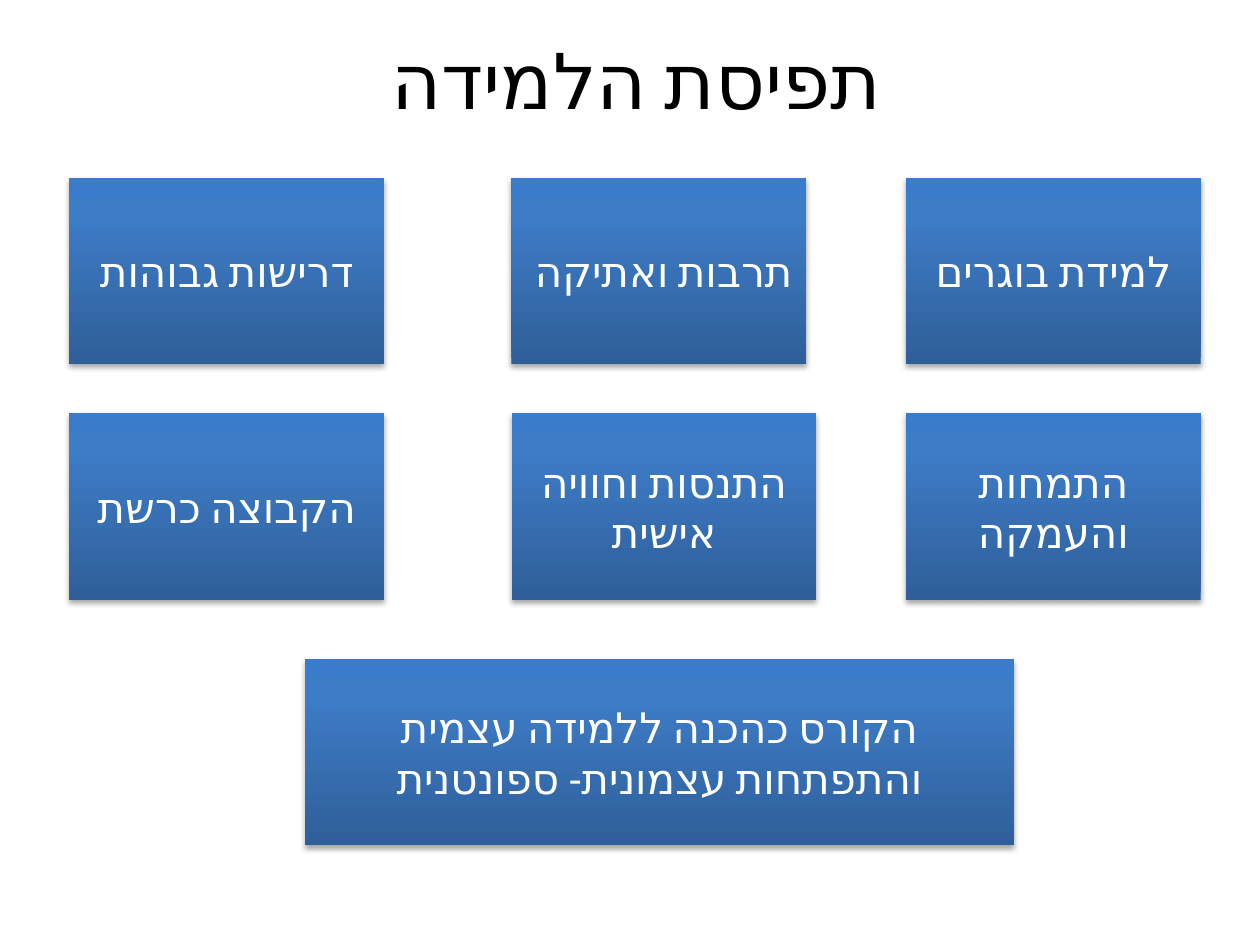
from copy import deepcopy
from dataclasses import dataclass

from lxml.etree import SubElement
from pptx import Presentation
from pptx.dml.color import RGBColor
from pptx.enum.lang import MSO_LANGUAGE_ID as Language
from pptx.enum.shapes import MSO_SHAPE as Shape
from pptx.enum.text import MSO_ANCHOR as Anchor, PP_ALIGN as Align
from pptx.oxml.ns import qn
from pptx.util import Inches, Pt

COLORS = {
    "title": "000000",
    "label": "FFFFFF",
    "bottom": "2F5F99",
    "middle": "3D7CC7",
    "top": "3A7CCB",
    "shadow": "000000",
}
STOPS = {0: "bottom", 0.8: "middle", 1: "top"}
SHADOW = {"blurRad": Pt(3.15), "dist": Pt(1.81), "dir": 90 * 60000, "rotWithShape": 0}
FONT = "Calibri"
BOX_HEIGHT = 1.48
LEFT, CENTER, RIGHT = 0.55, 4.06, 7.19
ROW_1, ROW_2, ROW_3 = 1.41, 3.28, 5.23


@dataclass(frozen=True)
class Principle:
    """A learning principle and the place of its box in inches."""

    text: str
    left: float
    top: float
    width: float


PRINCIPLES = (
    Principle("למידת בוגרים", RIGHT, ROW_1, 2.34),
    Principle("התמחות והעמקה", RIGHT, ROW_2, 2.34),
    Principle("דרישות גבוהות", LEFT, ROW_1, 2.5),
    Principle("הקבוצה כרשת", LEFT, ROW_2, 2.5),
    Principle("הקורס כהכנה ללמידה עצמית והתפתחות עצמונית- ספונטנית", 2.42, ROW_3, 5.63),
    Principle("תרבות ואתיקה ", CENTER, ROW_1, 2.34),
    Principle("התנסות וחוויה אישית", CENTER, ROW_2, 2.42),
)


def color(name: str) -> RGBColor:
    """Return the named colour."""
    return RGBColor.from_string(COLORS[name])


def write(box, text: str, size: int, color_name: str) -> None:
    """Write one centred right-to-left paragraph in the box."""
    frame = box.text_frame
    frame.word_wrap = True
    frame.vertical_anchor = Anchor.MIDDLE
    para = frame.paragraphs[0]
    para.alignment = Align.CENTER
    para._p.get_or_add_pPr().set("rtl", "1")
    span = para.add_run()
    span.text = text
    formats = {"name": FONT, "size": Pt(size), "language_id": Language.HEBREW}
    for key, value in formats.items():
        setattr(span.font, key, value)
    span.font.color.rgb = color(color_name)
    SubElement(span._r.rPr, qn("a:cs"), typeface=FONT)


def shade(box) -> None:
    """Fill the box with the vertical blue gradient."""
    box.fill.gradient()
    box.fill.gradient_angle = 90
    stop_list = box._element.spPr.find(".//" + qn("a:gsLst"))
    stop_list.append(deepcopy(stop_list[-1]))
    for stop, (position, name) in zip(box.fill.gradient_stops, STOPS.items()):
        stop.position = position
        stop.color.rgb = color(name)


def cast_shadow(box) -> None:
    """Give the box a soft shadow below."""
    box.shadow.inherit = False
    effects = box._element.spPr.find(qn("a:effectLst"))
    attributes = {key: str(int(value)) for key, value in SHADOW.items()}
    shadow = SubElement(effects, qn("a:outerShdw"), attributes)
    tint = SubElement(shadow, qn("a:srgbClr"), val=COLORS["shadow"])
    SubElement(tint, qn("a:alpha"), val="35000")


def add_principle(page, principle: Principle) -> None:
    """Draw one principle box with its label."""
    place = (principle.left, principle.top, principle.width, BOX_HEIGHT)
    box = page.shapes.add_shape(Shape.RECTANGLE, *map(Inches, place))
    shade(box)
    box.line.fill.background()
    cast_shadow(box)
    write(box, principle.text, 24, "label")


def main() -> None:
    """Build and save the slide."""
    deck = Presentation()
    deck.slide_width, deck.slide_height = Inches(10), Inches(7.5)
    page = deck.slides.add_slide(deck.slide_layouts[6])
    title = page.shapes.add_textbox(Inches(LEFT), Inches(0), Inches(9), Inches(1.25))
    write(title, "תפיסת הלמידה", 44, "title")
    for principle in PRINCIPLES:
        add_principle(page, principle)
    deck.save("out.pptx")


if __name__ == "__main__":
    main()
